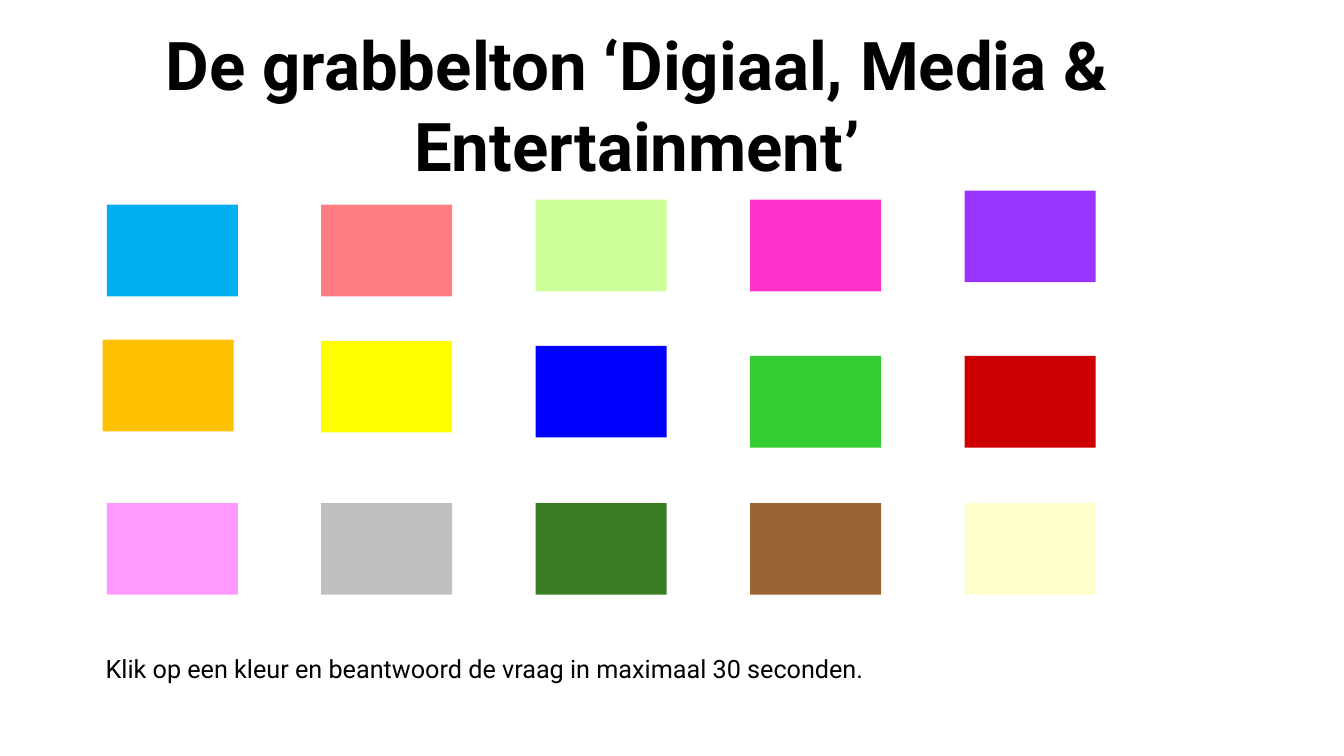
from dataclasses import dataclass

from pptx import Presentation
from pptx.dml.color import RGBColor
from pptx.enum.shapes import MSO_SHAPE
from pptx.enum.text import MSO_ANCHOR, MSO_AUTO_SIZE, PP_ALIGN
from pptx.shapes.base import BaseShape
from pptx.slide import Slide
from pptx.util import Pt


@dataclass(frozen=True)
class Theme:
    font: str = "Roboto"
    text: str = "000000"
    background: str = "FFFFFF"
    title_size: float = 48
    instruction_size: float = 18


@dataclass(frozen=True)
class ColourCard:
    colour: str
    top: float
    shift: float = 0


@dataclass(frozen=True)
class Box:
    left: float
    top: float
    width: float
    height: float


THEME = Theme()
FIRST_LEFT, COLUMN_PITCH = 76.3, 153.2
CARD_WIDTH, CARD_HEIGHT = 93.6, 65.5
BOTTOM_ROW_TOP = 359.3

CARD_ROWS: list[list[ColourCard]] = [
    [
        ColourCard("00B0F0", 146.2),
        ColourCard("FF7C80", 146.2),
        ColourCard("CCFF99", 142.6),
        ColourCard("FF33CC", 142.6),
        ColourCard("9933FF", 136.1),
    ],
    [
        ColourCard("FFC000", 242.6, shift=-2.9),
        ColourCard("FFFF00", 243.4),
        ColourCard("0000FF", 247),
        ColourCard("33CC33", 254.2),
        ColourCard("CC0000", 254.2),
    ],
    [
        ColourCard(colour, BOTTOM_ROW_TOP)
        for colour in ("FF99FF", "BFBFBF", "3B7D23", "996633", "FFFFCC")
    ],
]


def place(shape: BaseShape, box: Box) -> None:
    shape.left, shape.top = Pt(box.left), Pt(box.top)
    shape.width, shape.height = Pt(box.width), Pt(box.height)


def write_text(shape: BaseShape, text: str, size: float, bold: bool,
               align: PP_ALIGN, anchor: MSO_ANCHOR) -> None:
    frame = shape.text_frame
    frame.text = text
    frame.word_wrap = True
    frame.auto_size = MSO_AUTO_SIZE.SHAPE_TO_FIT_TEXT
    frame.vertical_anchor = anchor
    paragraph = frame.paragraphs[0]
    paragraph.alignment = align
    font = paragraph.runs[0].font
    font.name, font.size, font.bold = THEME.font, Pt(size), bold
    font.color.rgb = RGBColor.from_string(THEME.text)


def draw_card(slide: Slide, card: ColourCard, column: int) -> None:
    left = FIRST_LEFT + column * COLUMN_PITCH + card.shift
    rectangle = slide.shapes.add_shape(
        MSO_SHAPE.RECTANGLE, Pt(left), Pt(card.top), Pt(CARD_WIDTH), Pt(CARD_HEIGHT)
    )
    rectangle.shadow.inherit = False
    rectangle.fill.solid()
    rectangle.fill.fore_color.rgb = RGBColor.from_string(card.colour)
    rectangle.line.fill.background()


def main() -> None:
    presentation = Presentation()
    presentation.slide_width, presentation.slide_height = Pt(960), Pt(540)
    title_only = presentation.slide_layouts[5]
    slide = presentation.slides.add_slide(title_only)
    slide.background.fill.solid()
    slide.background.fill.fore_color.rgb = RGBColor.from_string(THEME.background)

    title = slide.shapes.title
    place(title, Box(-17.3, 13, 944.6, 123.8))
    write_text(title, "De grabbelton ‘Digiaal, Media & Entertainment’",
               THEME.title_size, True, PP_ALIGN.CENTER, MSO_ANCHOR.TOP)

    for row in CARD_ROWS:
        for column, card in enumerate(row):
            draw_card(slide, card, column)

    instruction = slide.shapes.add_textbox(Pt(68.4), Pt(463), Pt(815.8), Pt(28.8))
    write_text(instruction,
               "Klik op een kleur en beantwoord de vraag in maximaal 30 seconden.",
               THEME.instruction_size, False, PP_ALIGN.LEFT, MSO_ANCHOR.TOP)

    presentation.save("out.pptx")


if __name__ == "__main__":
    main()
